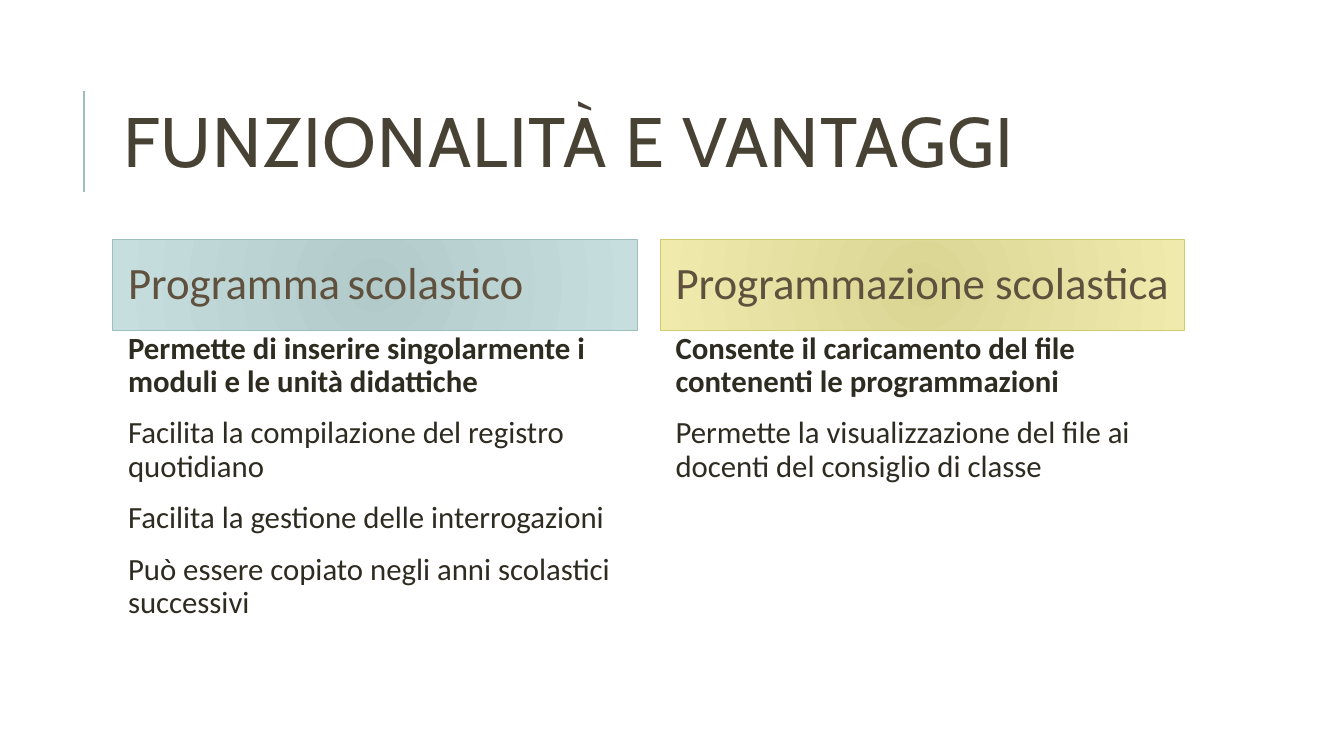
from lxml.etree import SubElement
from pptx import Presentation
from pptx.dml.color import RGBColor
from pptx.enum.shapes import MSO_CONNECTOR
from pptx.enum.text import MSO_ANCHOR, MSO_AUTO_SIZE, PP_ALIGN
from pptx.oxml.ns import qn
from pptx.util import Inches, Pt

# Content: heading pieces carry their own size
TITLE = "FUNZIONALITÀ E VANTAGGI"
COLUMNS = [
    ([("Programma", 32), (" ", 23), ("scolastico", 32)],
     ["Permette di inserire singolarmente i moduli e le unità didattiche",
      "Facilita la compilazione del registro quotidiano",
      "Facilita la gestione delle interrogazioni",
      "Può essere copiato negli anni scolastici successivi"]),
    ([("Programmazione scolastica", 32)],
     ["Consente il caricamento del file contenenti le programmazioni",
      "Permette la visualizzazione del file ai docenti del consiglio di classe"]),
]

# Colours
TEAL = RGBColor(0x9C, 0xBE, 0xBD)
OLIVE = RGBColor(0xD2, 0xCB, 0x6C)
DARK = RGBColor(0x47, 0x42, 0x33)
BROWN = RGBColor(0x5F, 0x51, 0x3E)
INK = RGBColor(0x2E, 0x2B, 0x21)
SHADES = [  # centre, edge, outline
    (RGBColor(0xB2, 0xCB, 0xCA), RGBColor(0xC6, 0xDE, 0xDE), TEAL),
    (RGBColor(0xDB, 0xD5, 0x94), RGBColor(0xF0, 0xEA, 0xAD), OLIVE),
]

# Text formats
TITLE_FONT = {"name": "Cabin", "size": Pt(50), "bold": False}
HEAD_FONT = {"name": "Calibri", "bold": False}
LIST_FONT = {"name": "Calibri", "size": Pt(22)}

# Grid, in inches
LEFT, WIDE, GAP = 1.12, 5.2, 0.23
HEAD_TOP, HEAD_TALL = 2.38, 0.9
LIST_TOP, LIST_TALL = 3.25, 3.65


def style(font, look, color):
    for key, value in look.items():
        setattr(font, key, value)
    font.color.rgb = color


def place(shape, x, y, w, h, side, anchor):
    shape.left, shape.top, shape.width, shape.height = map(Inches, (x, y, w, h))
    frame = shape.text_frame
    look = {"word_wrap": True, "auto_size": MSO_AUTO_SIZE.NONE,
            "vertical_anchor": anchor,
            "margin_left": Inches(side), "margin_right": Inches(side),
            "margin_top": Inches(0.05), "margin_bottom": Inches(0.05)}
    for key, value in look.items():
        setattr(frame, key, value)
    return frame


def shade(shape, inner, outer, edge):
    fill = shape.fill
    fill.gradient()
    for stop, color in zip(fill.gradient_stops, (inner, outer)):
        stop.color.rgb = color
    grad = shape.element.spPr.find(qn("a:gradFill"))
    grad.remove(grad.find(qn("a:lin")))
    path = SubElement(grad, qn("a:path"), {"path": "circle"})
    SubElement(path, qn("a:fillToRect"), {k: "100000" for k in "ltrb"})
    shape.line.color.rgb = edge
    shape.line.width = Pt(0.75)


def bullet(para):
    props = para._p.get_or_add_pPr()
    props.set("marL", str(Inches(0.1)))
    props.set("indent", str(Inches(-0.1)))
    tint = SubElement(props, qn("a:buClr"))
    SubElement(tint, qn("a:srgbClr"), {"val": str(TEAL)})
    SubElement(props, qn("a:buChar"), {"char": " "})


def main():
    deck = Presentation()
    deck.slide_width, deck.slide_height = Inches(13.33), Inches(7.5)
    slide = deck.slides.add_slide(deck.slide_layouts.get_by_name("Comparison"))
    title, *boxes = slide.placeholders

    # Title
    frame = place(title, LEFT, 0.64, 2 * WIDE + GAP, 1.64, 0.1,
                  MSO_ANCHOR.MIDDLE)
    para = frame.paragraphs[0]
    para.alignment, para.line_spacing = PP_ALIGN.LEFT, 0.8
    run = para.add_run()
    run.text = TITLE
    style(run.font, TITLE_FONT, DARK)
    run.font._element.set("spc", "100")

    # Two columns: shaded heading over a list
    pairs = zip(boxes[::2], boxes[1::2])
    for col, ((head, body), (parts, items)) in enumerate(zip(pairs, COLUMNS)):
        x = LEFT + col * (WIDE + GAP)
        frame = place(head, x, HEAD_TOP, WIDE, HEAD_TALL, 0.15,
                      MSO_ANCHOR.MIDDLE)
        shade(head, *SHADES[col])
        para = frame.paragraphs[0]
        para.line_spacing, para.space_before = 0.9, Pt(0)
        for text, size in parts:
            run = para.add_run()
            run.text = text
            style(run.font, HEAD_FONT | {"size": Pt(size)}, BROWN)

        frame = place(body, x, LIST_TOP, WIDE, LIST_TALL, 0.05, MSO_ANCHOR.TOP)
        frame.text = "\n".join(items)
        for row, para in enumerate(frame.paragraphs):
            para.line_spacing, para.space_after = 0.9, Pt(2)
            para.space_before = Pt(11 if row else 0)
            bullet(para)
            style(para.runs[0].font, LIST_FONT | {"bold": row == 0}, INK)

    # Rule beside the title
    rule = slide.shapes.add_connector(
        MSO_CONNECTOR.STRAIGHT, *map(Inches, (0.83, 1.9, 0.83, 0.9)))
    rule.line.color.rgb = TEAL
    rule.line.width = Pt(1.5)
    SubElement(rule._element.spPr, qn("a:effectLst"))

    deck.save("out.pptx")


if __name__ == "__main__":
    main()
